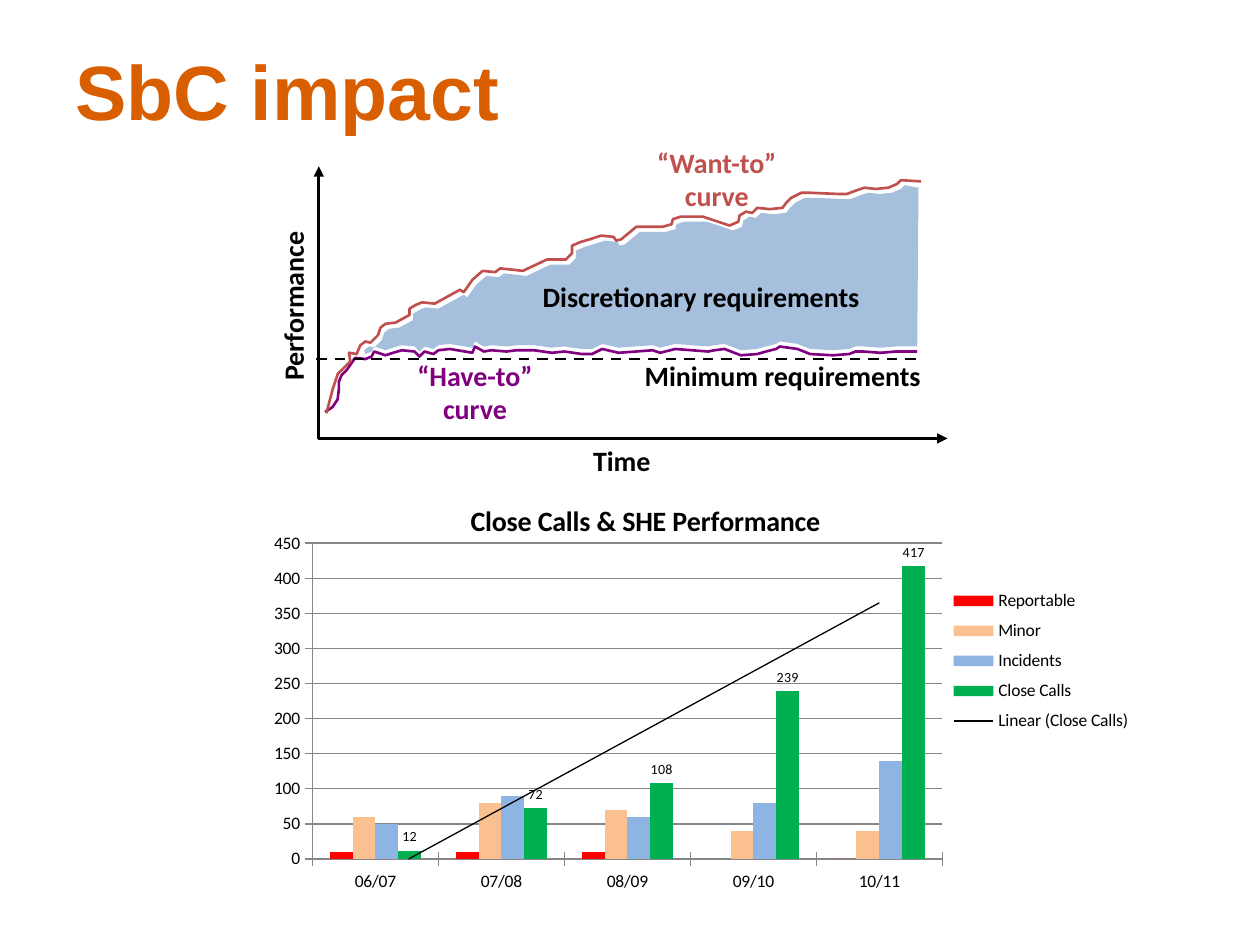
from dataclasses import dataclass

from lxml import etree
from pptx import Presentation
from pptx import util as u
from pptx.chart.data import CategoryChartData
from pptx.dml.color import RGBColor
from pptx.enum import chart as charts, dml, shapes, text
from pptx.oxml import parse_xml
from pptx.oxml.ns import nsdecls, qn


@dataclass(frozen=True)
class Theme:
    heading: str = "Arial"
    body: str = "Calibri"
    orange: str = "D95E00"
    black: str = "000000"
    grey: str = "868686"
    want: str = "C0504D"
    have: str = "800080"
    area: str = "4F81BD"
    title_size: float = 44
    label_size: float = 16
    chart_size: float = 10
    value_size: float = 8
    line_width: float = 1.5
    thin_line: float = 0.75


# Curve points in hundredths of an inch
HAVE_TO = [
    (258, 327), (264, 323), (268, 317), (269, 309), (269, 303), (271, 298), (275, 294),
    (282, 284), (290, 285), (295, 283), (297, 279), (306, 282), (312, 280), (319, 278),
    (329, 279), (333, 283), (337, 279), (344, 281), (348, 278), (357, 277), (369, 279),
    (375, 280), (377, 275), (384, 279), (390, 278), (402, 279), (410, 278), (424, 278),
    (438, 280), (448, 279), (462, 281), (470, 281), (478, 277), (491, 280), (518, 278),
    (524, 280), (536, 277), (562, 279), (567, 278), (575, 277), (588, 282), (601, 281),
    (608, 279), (616, 277), (619, 275), (633, 277), (643, 281), (661, 282), (674, 281),
    (679, 279), (685, 279), (699, 280), (711, 279), (728, 279)]
WANT_TO = [
    (259, 328), (264, 309), (268, 297), (278, 287), (277, 280), (283, 281), (286, 274),
    (290, 271), (294, 272), (300, 266), (302, 260), (306, 257), (314, 256), (325, 250),
    (325, 245), (330, 242), (335, 240), (345, 241), (365, 230), (368, 232), (375, 222),
    (383, 215), (393, 216), (397, 213), (415, 215), (434, 206), (449, 206), (454, 201),
    (454, 195), (461, 192), (468, 190), (477, 187), (487, 188), (489, 191), (493, 190),
    (505, 180), (526, 180), (533, 178), (534, 174), (540, 172), (558, 172), (567, 175),
    (579, 179), (586, 176), (587, 171), (592, 168), (597, 169), (601, 165), (611, 166),
    (621, 165), (624, 161), (628, 157), (636, 153), (643, 153), (666, 154), (672, 154),
    (680, 151), (686, 149), (695, 150), (705, 149), (712, 146), (715, 143), (731, 144)]
AXES = [(253, 132), (253, 348), (752, 348)]

YEARS = ["06/07", "07/08", "08/09", "09/10", "10/11"]
SERIES = [
    ("Reportable", "FF0000", (10, 10, 10, None, 0)),
    ("Minor", "FAC090", (60, 80, 70, 40, 40)),
    ("Incidents", "8EB4E3", (50, 90, 60, 80, 140)),
    ("Close Calls", "00B050", (12, 72, 108, 239, 417)),
]


def rgb(color):
    return RGBColor.from_string(color)


def shifted(points, dx, dy):
    return [(x + dx, y + dy) for x, y in points]


def place(element, x, y, size=None, inner=False):
    """Give a chart part a manual layout in fractions of the chart."""
    values = [("layoutTarget", "inner")] if inner else []
    values += [("xMode", "edge"), ("yMode", "edge"), ("x", x), ("y", y)]
    if size:
        values += zip("wh", size)
    tags = "".join(f'<c:{tag} val="{value}"/>' for tag, value in values)
    layout = parse_xml(f'<c:layout {nsdecls("c")}><c:manualLayout>{tags}'
                       '</c:manualLayout></c:layout>')
    for old in element.findall(qn("c:layout")):
        element.remove(old)
    before = [child for child in element
              if child.tag in (qn("c:tx"), qn("c:legendPos"))]
    element.insert(len(before), layout)


class SlideBuilder:
    def __init__(self, page, theme):
        self.page = page
        self.theme = theme
        self.diagram = page.shapes.add_group_shape().shapes

    def style_font(self, font, size, color, name=None, bold=True):
        font.name = name or self.theme.body
        font.size = u.Pt(size)
        font.bold = bold
        font.color.rgb = rgb(color)

    def style_line(self, line, color, width=None):
        line.color.rgb = rgb(color)
        line.width = u.Pt(width or self.theme.line_width)

    def title(self, wording, *bounds):
        box = self.page.shapes.title
        box.left, box.top, box.width, box.height = map(u.Inches, bounds)
        box.text_frame.text = wording
        box.text_frame.vertical_anchor = text.MSO_ANCHOR.MIDDLE
        para = box.text_frame.paragraphs[0]
        para.alignment = text.PP_ALIGN.LEFT
        self.style_font(para.font, self.theme.title_size, self.theme.orange,
                        self.theme.heading)

    def label(self, wording, *bounds, color=None, inset=0.0, wrap=True,
              align=text.PP_ALIGN.CENTER, anchor=text.MSO_ANCHOR.MIDDLE):
        box = self.diagram.add_textbox(*map(u.Inches, bounds))
        frame = box.text_frame
        frame.word_wrap = wrap
        frame.vertical_anchor = anchor
        frame.margin_left = frame.margin_right = u.Inches(inset)
        frame.margin_top = frame.margin_bottom = u.Inches(inset)
        para = frame.paragraphs[0]
        para.text = wording
        para.alignment = align
        self.style_font(para.font, self.theme.label_size, color or self.theme.black)
        return box

    def outline(self, points, closed=False):
        builder = self.diagram.build_freeform(*points[0], scale=u.Inches(0.01))
        builder.add_line_segments(points[1:], close=closed)
        shape = builder.convert_to_shape()
        shape.shadow.inherit = False
        return shape

    def curve(self, points, color, arrows=False):
        shape = self.outline(points)
        shape.fill.background()
        self.style_line(shape.line, color)
        if arrows:
            line = shape.element.spPr.find(qn("a:ln"))
            for end in ("a:headEnd", "a:tailEnd"):
                etree.SubElement(line, qn(end), type="triangle")

    def area(self, points, color, opacity):
        shape = self.outline(points, closed=True)
        shape.line.fill.background()
        shape.fill.solid()
        shape.fill.fore_color.rgb = rgb(color)
        tint = shape.element.spPr.find(".//" + qn("a:srgbClr"))
        etree.SubElement(tint, qn("a:alpha"), val=str(opacity * 1000))

    def dashed_line(self, *ends):
        line = self.diagram.add_connector(shapes.MSO_CONNECTOR.STRAIGHT,
                                          *map(u.Inches, ends))
        self.style_line(line.line, self.theme.black)
        line.line.dash_style = dml.MSO_LINE.DASH
        etree.SubElement(line.element.spPr, qn("a:effectLst"))

    def column_chart(self, heading, *bounds):
        theme = self.theme
        data = CategoryChartData()
        data.categories = YEARS
        for name, _, values in SERIES:
            data.add_series(name, values)
        chart = self.page.shapes.add_chart(charts.XL_CHART_TYPE.COLUMN_CLUSTERED,
                                           *map(u.Inches, bounds), data).chart
        self.style_font(chart.font, theme.chart_size, theme.black, bold=False)
        para = chart.chart_title.text_frame.paragraphs[0]
        para.text = heading
        self.style_font(para.font, theme.label_size, theme.black)
        chart.chart_title.include_in_layout = False
        chart.has_legend = True
        chart.legend.position = charts.XL_LEGEND_POSITION.RIGHT
        chart.legend.include_in_layout = False
        for tag, *layout in (("c:title", 0.228, 0.231),
                             ("c:legend", 0.693, 0.388, (0.25, 0.3)),
                             ("c:plotArea", 0.071, 0.318, (0.646, 0.59), True)):
            place(chart.element.find(".//" + qn(tag)), *layout)

        values = chart.value_axis
        values.minimum_scale, values.maximum_scale, values.major_unit = 0, 450, 50
        values.major_tick_mark = charts.XL_TICK_MARK.CROSS
        chart.category_axis.major_tick_mark = charts.XL_TICK_MARK.CROSS
        for part in (values, chart.category_axis, values.major_gridlines):
            self.style_line(part.format.line, theme.grey, theme.thin_line)

        plot = chart.plots[0]
        plot.vary_by_categories = False
        plot.gap_width, plot.overlap = 150, 0
        for series, (_, color, _) in zip(plot.series, SERIES):
            series.format.fill.solid()
            series.format.fill.fore_color.rgb = rgb(color)
        calls = plot.series[len(SERIES) - 1]
        labels = calls.data_labels
        labels.show_value = True
        labels.position = charts.XL_LABEL_POSITION.OUTSIDE_END
        self.style_font(labels.font, theme.value_size, theme.black, bold=False)
        trend = parse_xml(
            f'<c:trendline {nsdecls("c", "a")}><c:spPr><a:ln w="{u.Pt(theme.thin_line)}">'
            f'<a:solidFill><a:srgbClr val="{theme.black}"/></a:solidFill></a:ln></c:spPr>'
            '<c:trendlineType val="linear"/><c:dispRSqr val="0"/><c:dispEq val="0"/>'
            '</c:trendline>')
        calls._element.find(qn("c:cat")).addprevious(trend)


def main():
    deck = Presentation()
    deck.slide_width, deck.slide_height = u.Inches(10), u.Inches(7.5)
    theme = Theme()
    slide = SlideBuilder(deck.slides.add_slide(deck.slide_layouts[5]), theme)
    slide.title("SbC impact", 0.5, 0.25, 9, 0.93)
    slide.curve(AXES, theme.black, arrows=True)
    slide.label("Performance", 1.09, 1.98, 2.1, 0.9, inset=0.23,
                anchor=text.MSO_ANCHOR.BOTTOM).rotation = 270
    slide.label("Time", 2.51, 3.46, 4.85, 0.39)
    slide.curve(HAVE_TO, theme.have)
    slide.curve(WANT_TO, theme.want)
    slide.dashed_line(2.51, 2.85, 7.31, 2.85)
    slide.label("Minimum requirements", 4.74, 2.83, 2.57, 0.29, wrap=False,
                align=text.PP_ALIGN.RIGHT)
    upper_edge = shifted(WANT_TO[6:-1], 3, 4) + [(729, 149)]
    lower_edge = shifted(HAVE_TO[8:], 0, -4)
    slide.area(upper_edge + lower_edge[::-1], theme.area, opacity=50)
    slide.label("Discretionary requirements", 3.83, 2.21, 3.47, 0.29)
    slide.label("“Want-to” curve", 4.96, 1.07, 1.46, 0.7, color=theme.want, inset=0.06)
    slide.label("“Have-to” curve", 3.04, 2.76, 1.46, 0.7, color=theme.have, inset=0.06)
    slide.column_chart("Close Calls & SHE Performance", 1.93, 2.96, 7.74, 4.25)
    deck.save("out.pptx")


if __name__ == "__main__":
    main()
